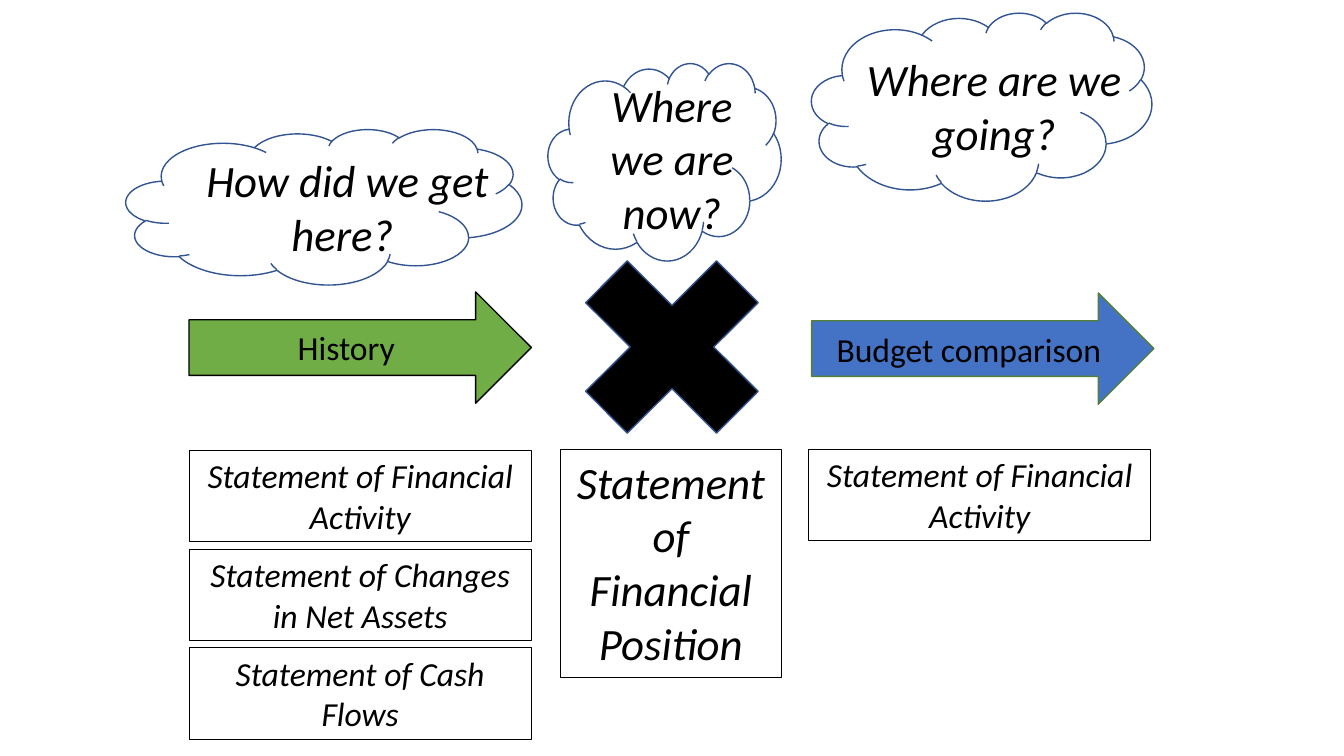
from dataclasses import dataclass

from pptx import Presentation
from pptx.dml.color import RGBColor as Color
from pptx.enum.shapes import MSO_SHAPE as Shape
from pptx.enum.text import MSO_ANCHOR as Anchor, MSO_AUTO_SIZE as AutoSize, PP_ALIGN as Align
from pptx.util import Emu, Pt

PX = 9525  # EMU per px, 96 px to the inch


@dataclass(frozen=True)
class Theme:
    font: str = "Calibri"
    black: str = "000000"
    green: str = "70AD47"
    dark_green: str = "538035"
    blue: str = "4472C4"
    dark_blue: str = "325491"
    large: int = 32
    medium: int = 24
    thin: float = 0.75
    outline: float = 1


THEME = Theme()


def px(*lengths):
    return [Emu(length * PX) for length in lengths]


def write(box, text, size, italic=True):
    frame = box.text_frame
    frame.word_wrap = True
    frame.text = text
    para = frame.paragraphs[0]
    para.alignment = Align.CENTER
    para.font.name = THEME.font
    para.font.size = Pt(size)
    para.font.italic = italic
    para.font.color.rgb = Color.from_string(THEME.black)
    return frame


def add_outline(page, kind, area, line, width, fill=None):
    shape = page.shapes.add_shape(kind, *px(*area))
    shape.shadow.inherit = False
    if fill:
        shape.fill.solid()
        shape.fill.fore_color.rgb = Color.from_string(fill)
    else:
        shape.fill.background()
    shape.line.color.rgb = Color.from_string(line)
    shape.line.width = Pt(width)
    return shape


def add_arrow(page, area, text, fill, line):
    arrow = add_outline(page, Shape.RIGHT_ARROW, area, line, THEME.outline, fill)
    frame = write(arrow, text, THEME.medium, italic=False)
    frame.vertical_anchor = Anchor.MIDDLE


def add_statement(page, area, text, size=THEME.medium):
    box = add_outline(page, Shape.RECTANGLE, area, THEME.black, THEME.thin)
    frame = write(box, text, size)
    frame.vertical_anchor = Anchor.TOP
    frame.auto_size = AutoSize.SHAPE_TO_FIT_TEXT


def add_thought(page, cloud_area, text_area, text):
    box = page.shapes.add_textbox(*px(*text_area))
    write(box, text, THEME.large).auto_size = AutoSize.SHAPE_TO_FIT_TEXT
    add_outline(page, Shape.CLOUD, cloud_area, THEME.dark_blue, THEME.outline)


def main():
    deck = Presentation()
    deck.slide_width, deck.slide_height = px(1280, 720)
    page = deck.slides.add_slide(deck.slide_layouts[6])

    # Timeline: past, present, future
    add_arrow(page, (180, 278, 326, 106), "History", THEME.green, THEME.black)
    add_outline(page, Shape.MATH_MULTIPLY, (520, 211, 240, 239),
                THEME.dark_blue, THEME.outline, THEME.black)
    add_arrow(page, (773, 279, 326, 106), "Budget comparison", THEME.blue, THEME.dark_green)

    # Questions in clouds
    add_thought(page, (120, 123, 377, 148), (157, 141, 348, 113), "How did we get here? ")
    add_thought(page, (522, 60, 222, 188), (545, 69, 190, 165), "Where we are now?")
    add_thought(page, (773, 12, 324, 179), (773, 45, 348, 113), "Where are we going?")

    # Statements that answer each question
    history = ("Statement of Financial Activity",
               "Statement of Changes in Net Assets",
               "Statement of Cash Flows")
    for row, statement in enumerate(history):
        add_statement(page, (180, 429 + 94 * row, 326, 87), statement)
    add_statement(page, (534, 428, 210, 217), "Statement of Financial Position", THEME.large)
    add_statement(page, (770, 428, 326, 87), history[0])

    deck.save("out.pptx")


if __name__ == "__main__":
    main()
